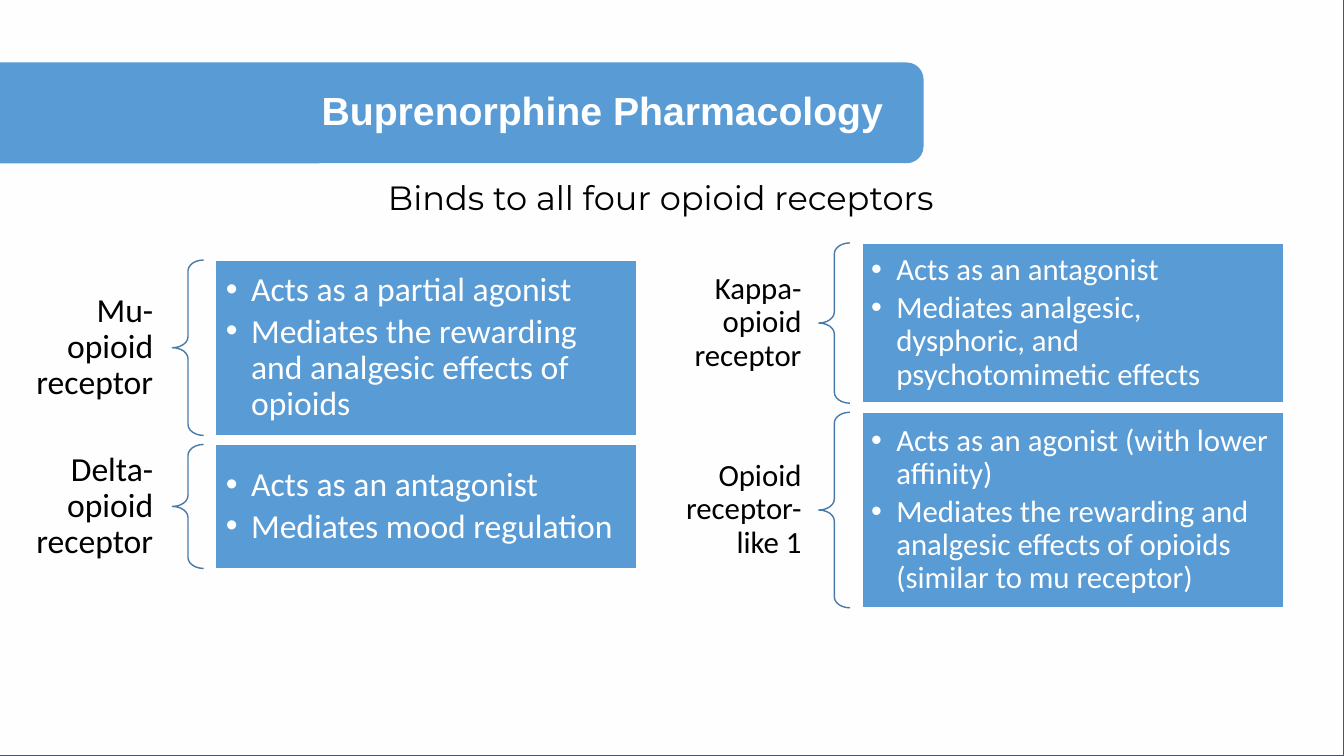
"""Build the buprenorphine pharmacology slide with its four receptor blocks."""
from dataclasses import dataclass

from lxml import etree
from pptx import Presentation
from pptx.dml.color import RGBColor
from pptx.enum.shapes import MSO_SHAPE
from pptx.enum.text import MSO_ANCHOR, MSO_AUTO_SIZE, PP_ALIGN
from pptx.oxml.ns import qn
from pptx.util import Inches, Pt

RECTANGLE = MSO_SHAPE.RECTANGLE
LEFT_BRACE = MSO_SHAPE.LEFT_BRACE
HEADER_SHAPE = MSO_SHAPE.ROUND_2_SAME_RECTANGLE
TOP, MIDDLE = MSO_ANCHOR.TOP, MSO_ANCHOR.MIDDLE
LEFT, RIGHT = PP_ALIGN.LEFT, PP_ALIGN.RIGHT
NO_AUTOFIT = MSO_AUTO_SIZE.NONE

BLUE = RGBColor(0x59, 0x9B, 0xD5)
BRACE_BLUE = RGBColor(0x48, 0x7A, 0xA8)
FRAME_SLATE = RGBColor(0x44, 0x54, 0x6A)
PAPER = RGBColor(0xFE, 0xFE, 0xFE)
WHITE = RGBColor(0xFF, 0xFF, 0xFF)
BLACK = RGBColor(0x00, 0x00, 0x00)

COMPARISON_LAYOUT = 4
SLIDE_WIDTH, SLIDE_HEIGHT = 13.33, 7.5
BRACE_WIDTH, BRACE_TO_BOX, BOX_WIDTH, ROW_GAP = 0.31, 0.43, 4.18, 0.09


@dataclass(frozen=True)
class Receptor:
    name: str
    height: float
    effects: tuple[str, ...]


@dataclass(frozen=True)
class Column:
    left: float
    top: float
    label_width: float
    label_height: float
    label_insets: tuple[float, float]
    box_inset: float
    size: float
    receptors: tuple[Receptor, ...]


COLUMNS = (
    Column(0, 2.58, 1.71, 1.23, (0.19, 0.07), 0.1, 24, (
        Receptor("Mu-opioid receptor", 1.74, (
            "Acts as a partial agonist",
            "Mediates the rewarding and analgesic effects of opioids")),
        Receptor("Delta-opioid receptor", 1.23, (
            "Acts as an antagonist",
            "Mediates mood regulation")),
    )),
    Column(6.58, 2.41, 1.54, 1.13, (0.17, 0.06), 0.09, 22, (
        Receptor("Kappa-opioid receptor", 1.59, (
            "Acts as an antagonist",
            "Mediates analgesic, dysphoric, and psychotomimetic effects")),
        Receptor("Opioid receptor-like 1", 1.94, (
            "Acts as an agonist (with lower affinity)",
            "Mediates the rewarding and analgesic effects of opioids "
            "(similar to mu receptor)")),
    )),
)


def place(shape, left: float, top: float, width: float, height: float) -> None:
    shape.left, shape.top = Inches(left), Inches(top)
    shape.width, shape.height = Inches(width), Inches(height)


def set_frame(frame, anchor, inset_x: float, inset_y: float) -> None:
    frame.word_wrap = True
    frame.auto_size = NO_AUTOFIT
    frame.vertical_anchor = anchor
    frame.margin_left = frame.margin_right = Inches(inset_x)
    frame.margin_top = frame.margin_bottom = Inches(inset_y)


def write(paragraph, text: str, font: str, size: float, color: RGBColor,
          align=LEFT, spacing: float = 1.0, before: float = 0,
          bold: bool = False) -> None:
    paragraph.alignment = align
    paragraph.line_spacing = spacing
    paragraph.space_before = Pt(before)
    run = paragraph.add_run()
    run.text = text
    run.font.name, run.font.size, run.font.bold = font, Pt(size), bold
    run.font.color.rgb = color


def add_bullet(paragraph) -> None:
    properties = paragraph._p.get_or_add_pPr()
    properties.set("marL", str(Inches(0.25)))
    properties.set("indent", str(Inches(-0.25)))
    bullet_color = etree.SubElement(properties, qn("a:buClr"))
    etree.SubElement(bullet_color, qn("a:srgbClr"), val=str(WHITE))
    etree.SubElement(properties, qn("a:buFont"), typeface="Arial")
    etree.SubElement(properties, qn("a:buChar"), char="•")


def add_backdrop(slide) -> None:
    page = slide.shapes.add_shape(
        RECTANGLE, 0, 0, Inches(SLIDE_WIDTH), Inches(SLIDE_HEIGHT))
    page.shadow.inherit = False
    page.fill.solid()
    page.fill.fore_color.rgb = PAPER
    page.line.color.rgb = FRAME_SLATE
    page.line.width = Pt(0.75)

    header = slide.shapes.add_shape(
        HEADER_SHAPE, Inches(4.08), Inches(-3.46), Inches(1), Inches(9.16))
    header.rotation = 90
    header.adjustments[0] = 0.167
    header.shadow.inherit = False
    header.fill.solid()
    header.fill.fore_color.rgb = BLUE
    header.line.fill.background()


def add_headings(slide) -> None:
    title = slide.shapes.title
    place(title, 3.09, 0.81, 9.33, 1.52)
    set_frame(title.text_frame, TOP, 0.1, 0.05)
    write(title.text_frame.paragraphs[0], "Buprenorphine Pharmacology",
          "Arial", 28, WHITE, bold=True)

    summary = slide.shapes.add_textbox(
        Inches(3.75), Inches(1.71), Inches(9.5), Inches(0.5))
    set_frame(summary.text_frame, TOP, 0.1, 0.05)
    write(summary.text_frame.paragraphs[0],
          "Binds to all four opioid receptors", "Montserrat", 24, BLACK)


def add_receptor(slide, effects_box, column: Column, receptor: Receptor,
                 top: float) -> None:
    label_top = top + (receptor.height - column.label_height) / 2
    label = slide.shapes.add_textbox(
        Inches(column.left), Inches(label_top),
        Inches(column.label_width), Inches(column.label_height))
    set_frame(label.text_frame, MIDDLE, *column.label_insets)
    write(label.text_frame.paragraphs[0], receptor.name, "Calibri",
          column.size, BLACK, RIGHT, 0.9)

    brace_left = column.left + column.label_width
    brace = slide.shapes.add_shape(
        LEFT_BRACE, Inches(brace_left), Inches(top),
        Inches(BRACE_WIDTH), Inches(receptor.height))
    brace.adjustments[0], brace.adjustments[1] = 0.35, 0.5
    brace.shadow.inherit = False
    brace.fill.background()
    brace.line.color.rgb = BRACE_BLUE
    brace.line.width = Pt(1)

    place(effects_box, brace_left + BRACE_TO_BOX, top,
          BOX_WIDTH, receptor.height)
    effects_box.fill.solid()
    effects_box.fill.fore_color.rgb = BLUE
    effects_box.line.color.rgb = WHITE
    effects_box.line.width = Pt(1)
    frame = effects_box.text_frame
    set_frame(frame, MIDDLE, column.box_inset, column.box_inset)
    for index, effect in enumerate(receptor.effects):
        paragraph = frame.add_paragraph() if index else frame.paragraphs[0]
        add_bullet(paragraph)
        write(paragraph, effect, "Calibri", column.size, WHITE,
              spacing=0.9, before=0.15 * column.size if index else 0)


def main() -> None:
    presentation = Presentation()
    presentation.slide_width = Inches(SLIDE_WIDTH)
    presentation.slide_height = Inches(SLIDE_HEIGHT)
    layout = presentation.slide_layouts[COMPARISON_LAYOUT]
    slide = presentation.slides.add_slide(layout)
    placeholders = list(slide.placeholders)
    add_backdrop(slide)
    for placeholder in placeholders:
        slide.shapes._spTree.append(placeholder._element)
    add_headings(slide)

    effects_boxes = iter(placeholders[1:])
    for column in COLUMNS:
        top = column.top
        for receptor in column.receptors:
            add_receptor(slide, next(effects_boxes), column, receptor, top)
            top += receptor.height + ROW_GAP
    presentation.save("out.pptx")


if __name__ == "__main__":
    main()
